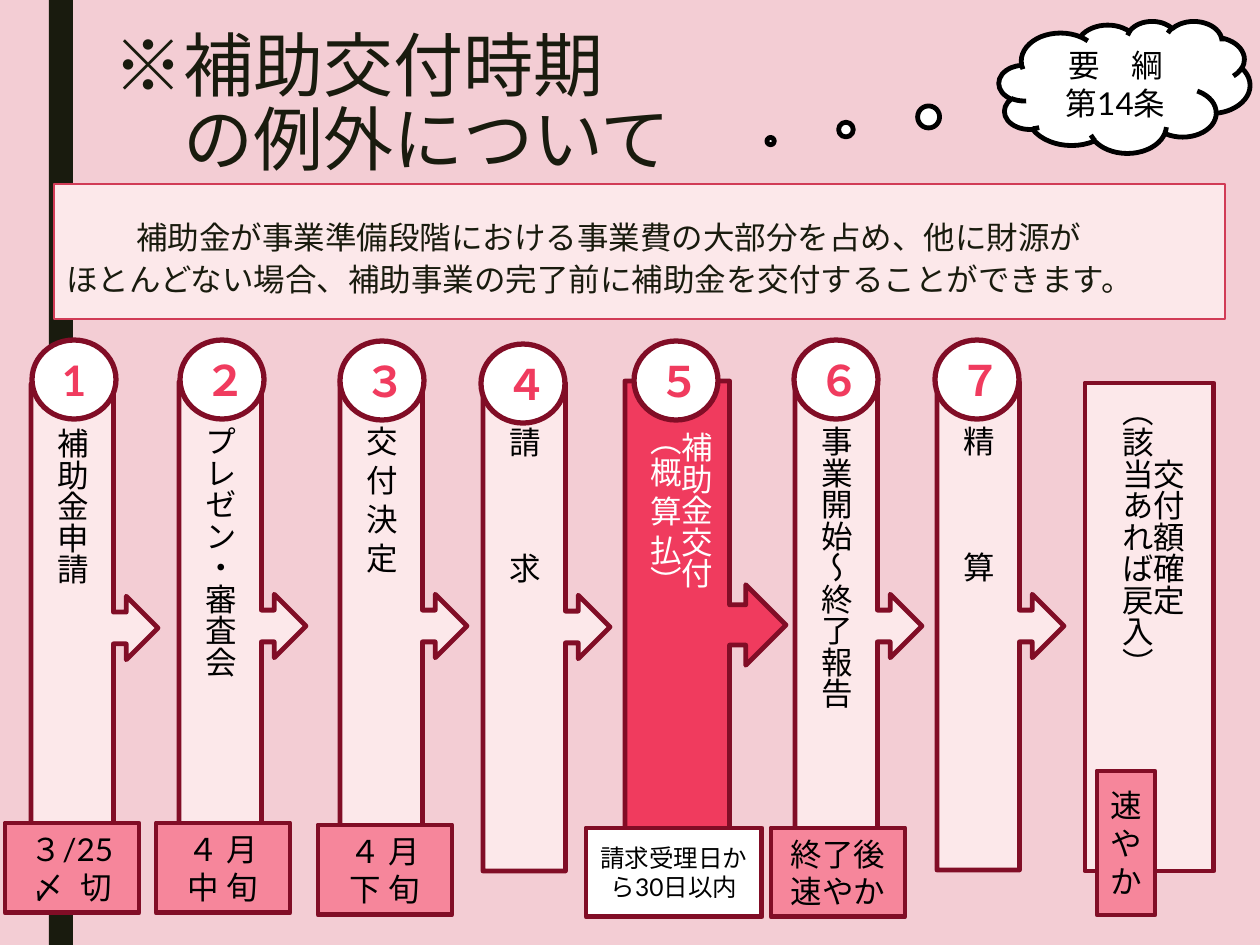
from lxml import etree
from pptx import Presentation, util as u
from pptx.dml.color import RGBColor
from pptx.enum import lang, shapes, text
from pptx.oxml.ns import qn

PX = 914400 / 126
COLORS = {
    "background": "F3CDD4", "dark": "191B0E", "pale": "FCE8EA", "pink": "F6869B",
    "red": "F03B5E", "wine": "810D26", "rose": "D13B56", "white": "FFFFFF", "black": "000000",
}
KIND = shapes.MSO_SHAPE
JAPANESE = "Noto Sans CJK JP"


def style(paragraph, size, color, align=text.PP_ALIGN.CENTER, bold=False, face="Lato",
          asian="Lato"):
    paragraph.alignment = align
    font = paragraph.font
    font.size, font.bold, font.name = u.Pt(size), bold, face
    font.color.rgb = RGBColor.from_string(COLORS[color])
    font.language_id = lang.MSO_LANGUAGE_ID.JAPANESE
    etree.SubElement(font._rPr, qn("a:ea")).set("typeface", asian)


def block(kind, box, fill, line=None, width=2.75, lines=(), size=18, color="black",
          bold=False, vertical=False):
    shape = slide.shapes.add_shape(kind, *[u.Emu(round(v * PX)) for v in box])
    shape.shadow.inherit = False
    shape.fill.solid()
    shape.fill.fore_color.rgb = RGBColor.from_string(COLORS[fill])
    if line:
        shape.line.color.rgb = RGBColor.from_string(COLORS[line])
        shape.line.width = u.Pt(width)
    else:
        shape.line.fill.background()
    if lines:
        frame = shape.text_frame
        frame.text = "\n".join(lines)
        frame.word_wrap = True
        frame.vertical_anchor = text.MSO_ANCHOR.MIDDLE
        if vertical:
            frame._txBody.bodyPr.set("vert", "eaVert")
        for paragraph in frame.paragraphs:
            style(paragraph, size, color, bold=bold, asian=JAPANESE if vertical else "Lato")
            if vertical and len(lines) > 1:
                paragraph.line_spacing = 0.83
    return shape


deck = Presentation()
deck.slide_width, deck.slide_height = u.Inches(10), u.Inches(7.5)
slide = deck.slides.add_slide(deck.slide_layouts[5])
slide.background.fill.solid()
slide.background.fill.fore_color.rgb = RGBColor.from_string(COLORS["background"])

side_bar = block(KIND.RECTANGLE, (49, 0, 24, 945), "dark")

title = slide.shapes.title
title.left, title.top, title.width, title.height = [
    u.Emu(round(v * PX)) for v in (31, 25, 1171, 100)]
heading = title.text_frame
heading.text = "　※補助交付時期\v　　の例外について"
heading.auto_size = text.MSO_AUTO_SIZE.NONE
heading.vertical_anchor = text.MSO_ANCHOR.TOP
style(heading.paragraphs[0], 40, "dark", text.PP_ALIGN.LEFT, face=JAPANESE)
heading.paragraphs[0].line_spacing = 0.89

steps = [
    ("1", 31, 384, 127, ["　補助金申請"], 32, 340),
    ("２", 179, 382, 127, ["　プレゼン・審査会"], 180, 340),
    ("３", 340, 382, 127, ["　交 付 決 定"], 340, 341),
    ("４", 483, 383, 127, ["　請　　　求"], 481, 344),
    ("５", 625, 381, 161, ["　補助金交付", "　（概 算 払）"], 634, 341),
    ("６", 795, 382, 127, ["　事業開始～終了報告"], 794, 340),
    ("７", 937, 382, 127, ["　精　　　算"], 935, 340),
]
for number, left, top, width, label, badge_left, badge_top in steps:
    current = number == "５"
    block(KIND.RIGHT_ARROW_CALLOUT, (left, top, width, 488), "red" if current else "pale",
          "wine", lines=label, color="white" if current else "black", vertical=True)
    block(KIND.OVAL, (badge_left, badge_top, 84, 79), "white", "wine", 3,
          [number], 24, "red", bold=True)

block(KIND.RECTANGLE, (1085, 383, 129, 488), "pale", "wine",
      lines=["交付額確定", "（該当あれば戻入）"], vertical=True)

deadlines = [
    ((5, 823, 134, 90), ["３/25", "〆  切"], "pink", 18),
    ((156, 823, 134, 90), ["４ 月", "中 旬"], "pink", 18),
    ((318, 825, 134, 90), ["４ 月", "下 旬"], "pink", 18),
    ((586, 828, 176, 89), ["請求受理日から30日以内"], "white", 14),
    ((771, 828, 134, 89), ["終了後", "速やか"], "pink", 18),
    ((1097, 771, 58, 144), ["速やか"], "pink", 18),
]
for box, lines, fill, size in deadlines:
    block(KIND.RECTANGLE, box, fill, "wine", lines=lines, size=size)

summary = block(KIND.RECTANGLE, (54, 184, 1171, 135), "pale", "rose", 0.75).text_frame
summary.word_wrap = True
summary.vertical_anchor = text.MSO_ANCHOR.TOP
opening, closing = summary.paragraphs[0], summary.add_paragraph()
opening.add_run().text = "　"
opening.runs[0].font.size = u.Pt(40)
opening.add_run().text = "補助金が事業準備段階における事業費の大部分を占め、他に財源が"
closing.text = "ほとんどない場合、補助事業の完了前に補助金を交付することができます。"
for paragraph in (opening, closing):
    style(paragraph, 18, "dark", text.PP_ALIGN.LEFT, face=JAPANESE)
    paragraph.line_spacing = 0.89

cloud = block(KIND.CLOUD_CALLOUT, (999, 21, 251, 132), "white", "black",
              lines=["要　綱", "第14条"])
cloud.adjustments[0], cloud.adjustments[1] = -1.41, 0.41

deck.save("out.pptx")
